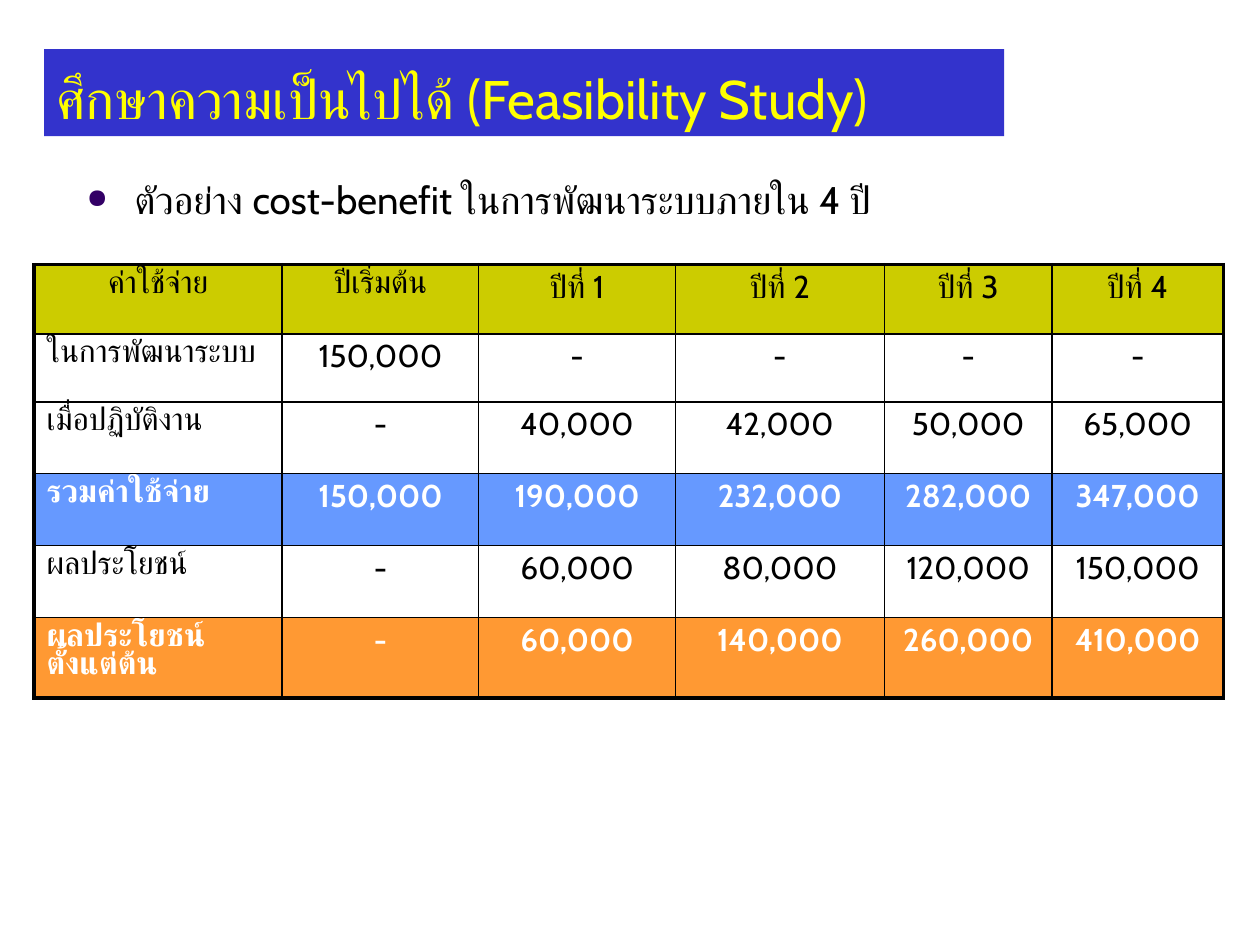
from lxml import etree
from pptx import Presentation
from pptx.dml.color import RGBColor
from pptx.enum.shapes import MSO_SHAPE
from pptx.enum.text import MSO_ANCHOR, PP_ALIGN
from pptx.oxml.ns import qn
from pptx.util import Inches, Pt

RECT = MSO_SHAPE.RECTANGLE
BOTTOM, TOP = MSO_ANCHOR.BOTTOM, MSO_ANCHOR.TOP
LEFT, CENTER = PP_ALIGN.LEFT, PP_ALIGN.CENTER

FONT = "Cabin"
COLORS = {
    "title_bg": "3333CC", "title": "FFFF00", "bullet": "330066",
    "black": "000000", "white": "FFFFFF",
    "header": "CCCC00", "total": "6699FF", "benefit": "FF9933",
}


def rgb(name):
    return RGBColor.from_string(COLORS[name])


def write(tf, text, size=18, color="black", bold=False, align=LEFT, spacing=None):
    tf.word_wrap = True
    p = tf.paragraphs[0]
    p.alignment = align
    if spacing:
        p.line_spacing = spacing
        p.space_before = Pt(0.2 * size)
    r = p.add_run()
    r.text = text
    r.font.name, r.font.size, r.font.bold = FONT, Pt(size), bold
    r.font.color.rgb = rgb(color)
    return p


prs = Presentation()
prs.slide_width, prs.slide_height = Inches(10), Inches(7.5)
s = prs.slides.add_slide(prs.slide_layouts[6])

# Title bar
sp = s.shapes.add_shape(RECT, Inches(0.35), Inches(0.39), Inches(7.62), Inches(0.69))
sp.shadow.inherit = False
sp.fill.solid()
sp.fill.fore_color.rgb = rgb("title_bg")
sp.line.fill.background()
sp.text_frame.vertical_anchor = BOTTOM
write(sp.text_frame, "ศึกษาความเป็นไปได้ (Feasibility Study)", size=31, color="title")

# Bullet line
tb = s.shapes.add_textbox(Inches(0.59), Inches(1.39), Inches(7.87), Inches(0.65))
p = write(tb.text_frame, "ตัวอย่าง cost-benefit ในการพัฒนาระบบภายใน 4 ปี", size=22, spacing=0.9)
pPr = p._p.get_or_add_pPr()
pPr.set("marL", str(Inches(0.38)))
pPr.set("indent", str(Inches(-0.38)))
bu_clr = etree.SubElement(pPr, qn("a:buClr"))
etree.SubElement(bu_clr, qn("a:srgbClr"), val=COLORS["bullet"])
etree.SubElement(pPr, qn("a:buSzPct"), val="70000")
etree.SubElement(pPr, qn("a:buChar"), char="●")

# Cost-benefit table: fill, text colour, bold, cell texts
rows = [
    ("header", "black", False, ["ค่าใช้จ่าย", "ปีเริ่มต้น", "ปีที่ 1", "ปีที่ 2", "ปีที่ 3", "ปีที่ 4"]),
    (None, "black", False, ["ในการพัฒนาระบบ", "150,000", "-", "-", "-", "-"]),
    (None, "black", False, ["เมื่อปฏิบัติงาน", "-", "40,000", "42,000", "50,000", "65,000"]),
    ("total", "white", True, ["รวมค่าใช้จ่าย", "150,000", "190,000", "232,000", "282,000", "347,000"]),
    (None, "black", False, ["ผลประโยชน์", "-", "60,000", "80,000", "120,000", "150,000"]),
    ("benefit", "white", True, ["ผลประโยชน์ตั้งแต่ต้น", "-", "60,000", "140,000", "260,000", "410,000"]),
]
col_widths = [1.97, 1.56, 1.56, 1.66, 1.33, 1.36]
row_heights = [0.55, 0.54, 0.57, 0.57, 0.57, 0.36]
last_row, last_col = len(rows) - 1, len(col_widths) - 1

gf = s.shapes.add_table(len(rows), len(col_widths), Inches(0.27), Inches(2.1),
                        Inches(9.45), Inches(3.53))
table = gf.table
table.first_row = table.horz_banding = False
for col, width in zip(table.columns, col_widths):
    col.width = Inches(width)
for row, height in zip(table.rows, row_heights):
    row.height = Inches(height)
gf.height = Inches(3.53)

for i, (fill, color, bold, texts) in enumerate(rows):
    for j, text in enumerate(texts):
        cell = table.cell(i, j)
        cell.vertical_anchor = TOP
        align = LEFT if i > 0 and j == 0 else CENTER
        write(cell.text_frame, text, color=color, bold=bold, align=align, spacing=0.9)

        # Thick outer frame, thin inner grid
        outer = {"lnL": j == 0, "lnR": j == last_col, "lnT": i == 0, "lnB": i == last_row}
        tcPr = cell._tc.get_or_add_tcPr()
        for side, thick in outer.items():
            ln = etree.SubElement(tcPr, qn("a:" + side), w=str(Pt(2.25 if thick else 1)))
            line_fill = etree.SubElement(ln, qn("a:solidFill"))
            etree.SubElement(line_fill, qn("a:srgbClr"), val=COLORS["black"])

        if fill:
            cell.fill.solid()
            cell.fill.fore_color.rgb = rgb(fill)
        else:
            cell.fill.background()

prs.save("out.pptx")
